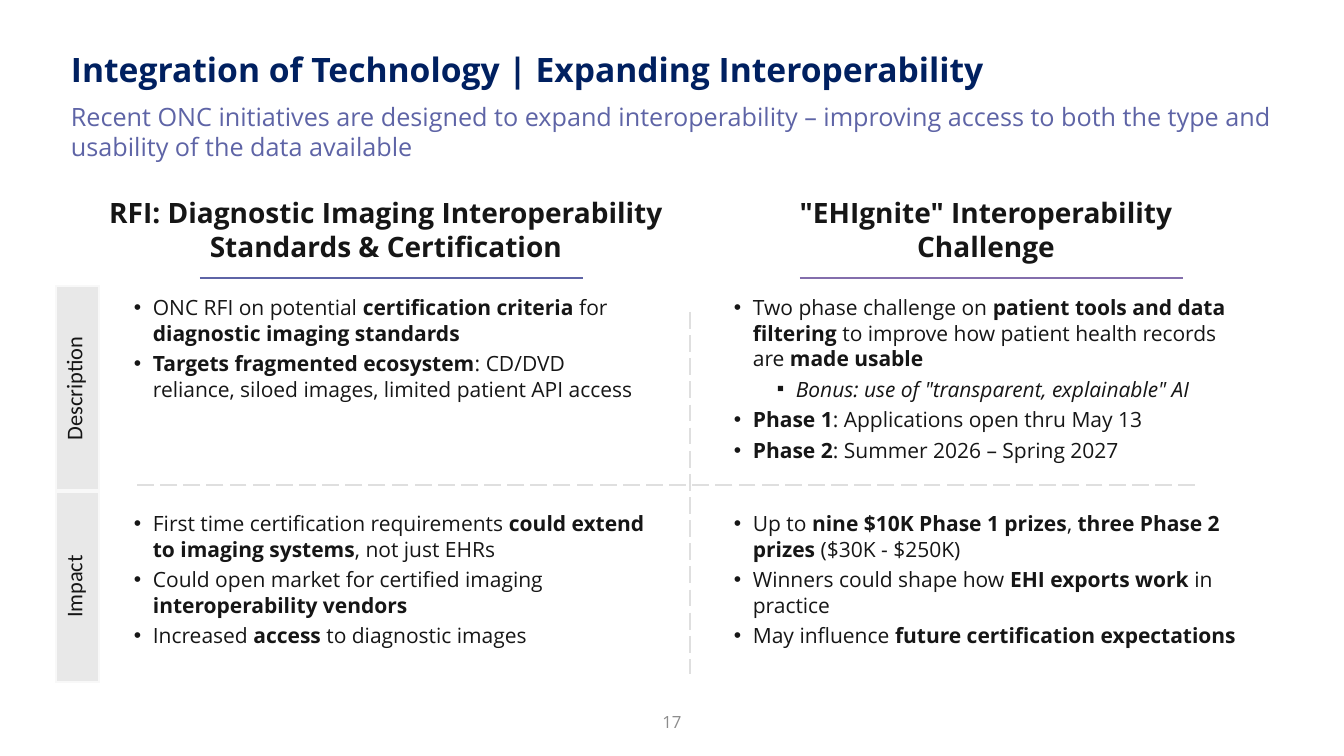
from lxml.etree import SubElement as sub
from pptx import Presentation
from pptx.dml.color import RGBColor
from pptx.enum.dml import MSO_LINE_DASH_STYLE as Dash
from pptx.enum.shapes import MSO_CONNECTOR as Link
from pptx.enum.text import MSO_ANCHOR as Anchor, MSO_AUTO_SIZE as Fit, PP_ALIGN as Align
from pptx.oxml import parse_xml
from pptx.oxml.ns import nsdecls, qn
from pptx.util import Pt

INK = "161616"
VIOLET = "5E64A6"
PALE = "DFDFDF"
STEP = 600  # distance between the two columns

COLUMNS = [
    (["RFI: Diagnostic Imaging Interoperability Standards & Certification"],
     VIOLET,
     ["ONC RFI on potential **certification criteria **for **diagnostic imaging standards**",
      "**Targets fragmented ecosystem**: CD/DVD reliance, siloed images, "
      "limited patient API access"],
     ["First time certification requirements **could extend to imaging systems**, not just EHRs",
      "Could open market for certified imaging **interoperability vendors**",
      "Increased **access** to diagnostic images"]),
    (['"EHIgnite" Interoperability', "Challenge"],
     "836EAC",
     ["Two phase challenge on **patient tools and data filtering **to improve how "
      "patient health records are **made usable**",
      '>Bonus: use of "transparent, explainable" AI',
      "**Phase 1**: Applications open thru May 13",
      "**Phase 2**: Summer 2026 – Spring 2027"],
     ["Up to **nine $10K Phase 1 prizes**, **three Phase 2 prizes **($30K - $250K)",
      "Winners could shape how **EHI exports work **in practice",
      "May influence **future certification expectations**"]),
]


def px(n):
    return round(n * 914400 / 100.8)


def color(code):
    return RGBColor.from_string(code)


def style(para, size, code, bold=None, face="Open Sans"):
    font = para.font
    font.name, font.size, font.bold = face, Pt(size), bold
    font.color.rgb = color(code)


def add_box(slide, x, y, w, h):
    shape = slide.shapes.add_textbox(px(x), px(y), px(w), px(h))
    frame = shape.text_frame
    frame.word_wrap = True
    frame.auto_size = Fit.SHAPE_TO_FIT_TEXT
    return frame


def add_paras(frame, lines):
    """Yield each line with its paragraph, reusing the first one."""
    for i, line in enumerate(lines):
        yield line, frame.paragraphs[0] if i == 0 else frame.add_paragraph()


def add_text(slide, x, y, w, h, lines, size, code, bold=None, align=None):
    frame = add_box(slide, x, y, w, h)
    for line, para in add_paras(frame, lines):
        para.text = line
        para.alignment = align
        style(para, size, code, bold)
    return frame


def add_list(slide, x, y, w, h, items):
    """Bulleted text: ** switches bold, a leading > marks a sub-item."""
    frame = add_box(slide, x, y, w, h)
    for item, para in add_paras(frame, items):
        deep = item.startswith(">")
        para.level = 2 if deep else 1
        para.space_after = Pt(4)
        props = para._p.get_or_add_pPr()
        props.set("marL", str(px(62 if deep else 19)))
        props.set("indent", str(px(-19)))
        sub(props, qn("a:buFont"), typeface="Arial")
        sub(props, qn("a:buChar"), char="▪" if deep else "•")
        style(para, 15, INK)
        para.font.italic = deep
        for i, part in enumerate(item.lstrip(">").split("**")):
            if part:
                run = para.add_run()
                run.text = part
                run.font.bold = i % 2 == 1


def add_line(slide, x1, y1, x2, y2, code, dash=None):
    line = slide.shapes.add_connector(Link.STRAIGHT, px(x1), px(y1), px(x2), px(y2))
    line.line.color.rgb = color(code)
    line.line.width = Pt(1.5)
    if dash:
        line.line.dash_style = dash
    sub(line._element.spPr, qn("a:effectLst"))


def set_edges(cell, widths):
    props = cell._tc.get_or_add_tcPr()
    for i, (side, width) in enumerate(zip("LRTB", widths)):
        props.insert(i, parse_xml(
            f'<a:ln{side} {nsdecls("a")} w="{Pt(width)}"><a:solidFill>'
            f'<a:srgbClr val="F8F8F8"/></a:solidFill></a:ln{side}>'))


def add_labels(slide, x, y, w, rows):
    total = sum(high for _, high, _ in rows)
    table = slide.shapes.add_table(len(rows), 1, px(x), px(y), px(w), px(total)).table
    table.first_row = table.horz_banding = False
    table.columns[0].width = px(w)
    for i, (name, high, base) in enumerate(rows):
        table.rows[i].height = px(high)
        cell = table.cell(i, 0)
        cell.fill.solid()
        cell.fill.fore_color.rgb = color("E8E8E8")
        cell.vertical_anchor = Anchor.MIDDLE
        cell._tc.get_or_add_tcPr().set("vert", "vert270")
        set_edges(cell, (1, 1, 1, base))
        para = cell.text_frame.paragraphs[0]
        para.text = name
        para.alignment = Align.CENTER
        style(para, 16, INK, False, "Calibri")


def main():
    deck = Presentation()
    deck.slide_width, deck.slide_height = px(1344), px(756)
    slide = deck.slides.add_slide(deck.slide_layouts[6])

    add_text(slide, 61, 44, 1269, 50,
             ["Integration of Technology | Expanding Interoperability"], 24, "002060", True)
    add_text(slide, 61, 96, 1250, 72,
             ["Recent ONC initiatives are designed to expand interoperability – improving "
              "access to both the type and usability of the data available"], 18, VIOLET)
    number = add_text(slide, 521, 702, 302, 40, ["17"], 12, "8C8C8C", align=Align.CENTER)
    number.auto_size = Fit.NONE
    number.vertical_anchor = Anchor.MIDDLE

    add_labels(slide, 56, 286, 43, [("Description", 205, 3), ("Impact", 191, 1)])
    for i, (head, code, about, impact) in enumerate(COLUMNS):
        x = i * STEP
        title = add_text(slide, x + 109, 191, 564, 78, head, 20, INK, True, Align.CENTER)
        title.margin_left = 0
        add_line(slide, x + 200, 278, x + 583, 278, code)
        add_list(slide, x + 124, 290, 534, 179 if i else 118, about)
        add_list(slide, x + 124, 506, 534, 149, impact)

    add_line(slide, 690, 312, 690, 674, PALE, Dash.LONG_DASH)
    add_line(slide, 1195, 485, 136, 485, PALE, Dash.LONG_DASH)
    deck.save("out.pptx")


if __name__ == "__main__":
    main()
